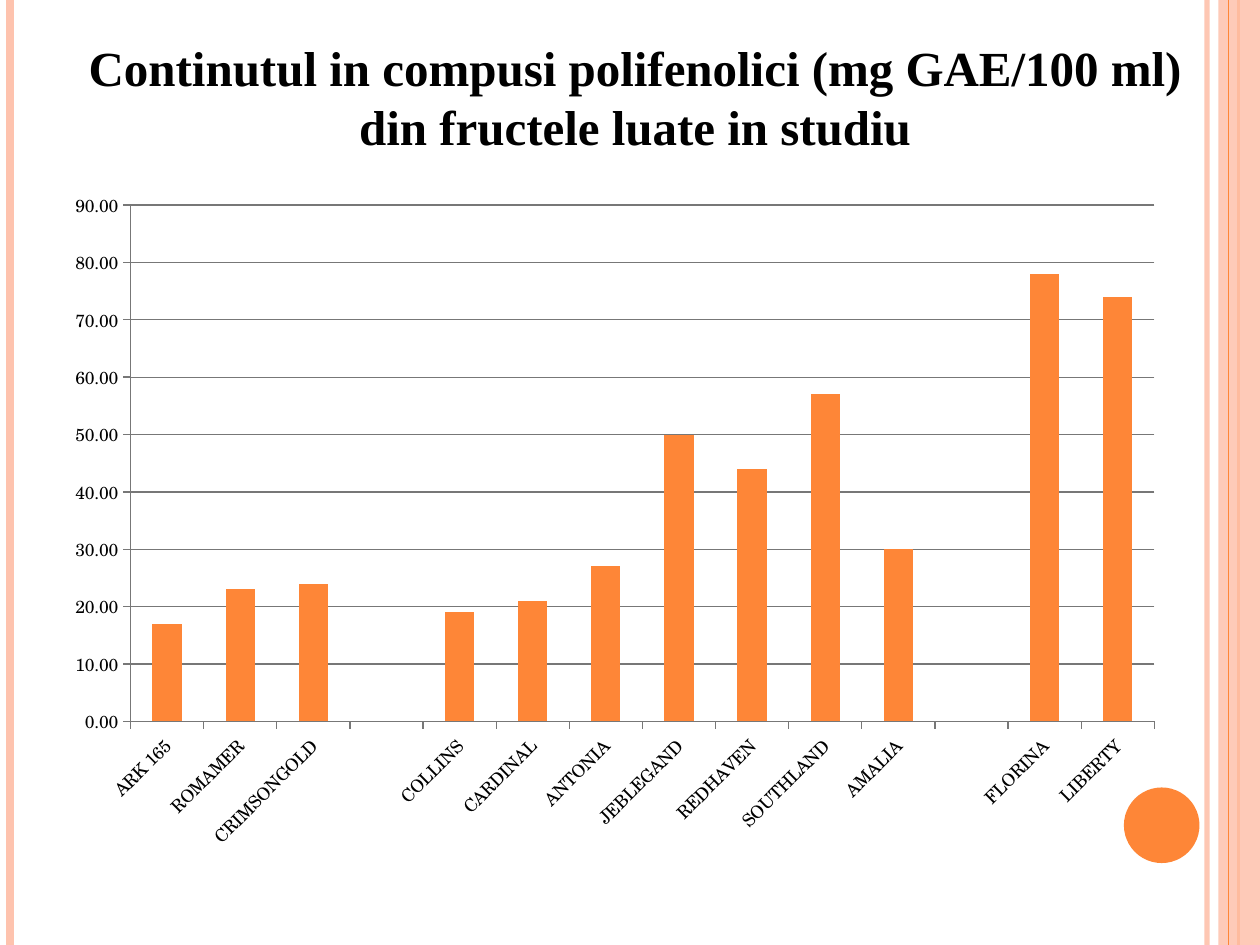
from lxml import etree
from pptx import Presentation
from pptx.chart.data import CategoryChartData
from pptx.dml.color import RGBColor
from pptx.enum import chart as charts, shapes, text
from pptx.oxml.ns import qn
from pptx.util import Inches, Pt

ORANGE, PEACH, GRAY, BLACK = "FE8637", "FEC3AE", "777777", "000000"
POLYPHENOLS = [
    ("ARK 165", 17), ("ROMAMER", 23), ("CRIMSONGOLD", 24), ("", None),
    ("COLLINS", 19), ("CARDINAL", 21), ("ANTONIA", 27),
    ("JEBLEGAND", 50), ("REDHAVEN", 44), ("SOUTHLAND", 57),
    ("AMALIA", 30), ("", None), ("FLORINA", 78), ("LIBERTY", 74),
]


def paint(fill, color, opacity=100):
    fill.solid()
    fill.fore_color.rgb = RGBColor.from_string(color)
    if opacity < 100:
        for node in fill._xPr.iter(qn("a:srgbClr")):
            etree.SubElement(node, qn("a:alpha"), val=str(opacity * 1000))


def add_stripe(page, x, color, width, opacity=100):
    """Draw a vertical line over the full height of the slide."""
    stripe = page.shapes.add_connector(
        shapes.MSO_CONNECTOR.STRAIGHT, Inches(x), 0, Inches(x), Inches(7.5))
    stripe.line.width = Pt(width)
    paint(stripe.line.fill, color, opacity)
    etree.SubElement(stripe._element.spPr, qn("a:effectLst"))


def add_shape(page, kind, left, top, width, height, color, opacity=100):
    shape = page.shapes.add_shape(
        kind, Inches(left), Inches(top), Inches(width), Inches(height))
    shape.shadow.inherit = False
    shape.line.fill.background()
    paint(shape.fill, color, opacity)


def add_text(page, words, left, top, width, height, *, size, font, color, bold=False):
    box = page.shapes.add_textbox(
        Inches(left), Inches(top), Inches(width), Inches(height))
    frame = box.text_frame
    frame.word_wrap = True
    frame.auto_size = text.MSO_AUTO_SIZE.SHAPE_TO_FIT_TEXT
    para = frame.paragraphs[0]
    para.alignment = text.PP_ALIGN.CENTER
    span = para.add_run()
    span.text = words
    span.font.size, span.font.name, span.font.bold = Pt(size), font, bold
    span.font.color.rgb = RGBColor.from_string(color)


def style_axis(axis):
    axis.major_tick_mark = charts.XL_TICK_MARK.OUTSIDE
    axis.minor_tick_mark = charts.XL_TICK_MARK.NONE
    axis.format.line.width = Pt(0.75)
    paint(axis.format.line.fill, GRAY)


def add_column_chart(page, rows, left, top, width, height):
    data = CategoryChartData(number_format="0.00")
    data.categories = [name for name, _ in rows]
    data.add_series("Series 1", [value for _, value in rows])
    chart = page.shapes.add_chart(
        charts.XL_CHART_TYPE.COLUMN_CLUSTERED, Inches(left), Inches(top),
        Inches(width), Inches(height), data).chart
    chart.has_legend = chart.has_title = False
    chart.font.size, chart.font.name = Pt(10), "TeX Gyre Schola"
    chart.font.color.rgb = RGBColor.from_string(BLACK)

    plot = chart.plots[0]
    plot.gap_width = 150
    plot.vary_by_categories = False
    paint(plot.series[0].format.fill, ORANGE)

    names, amounts = chart.category_axis, chart.value_axis
    style_axis(names)
    style_axis(amounts)
    names.tick_labels.font.size = Pt(10)
    for body in names._element.iter(qn("a:bodyPr")):
        body.set("rot", str(-45 * 60000))
    amounts.minimum_scale, amounts.maximum_scale, amounts.major_unit = 0, 90, 10
    amounts.tick_labels.number_format = "0.00"
    amounts.tick_labels.number_format_is_linked = False
    grid = amounts.major_gridlines.format.line
    grid.width = Pt(0.75)
    paint(grid.fill, GRAY)


def main():
    deck = Presentation()
    deck.slide_width, deck.slide_height = Inches(10), Inches(7.5)
    page = deck.slides.add_slide(deck.slide_layouts[6])

    add_stripe(page, 9.58, PEACH, 3, opacity=93)
    add_stripe(page, 0.08, PEACH, 4.5)
    add_stripe(page, 9.83, ORANGE, 1.5)
    add_shape(page, shapes.MSO_SHAPE.RECTANGLE, 9.67, 0, 0.33, 7.5, PEACH, opacity=87)
    add_stripe(page, 9.75, ORANGE, 0.75)
    add_shape(page, shapes.MSO_SHAPE.OVAL, 8.92, 6.25, 0.6, 0.6, ORANGE)

    add_column_chart(page, POLYPHENOLS, 0.42, 1.42, 8.92, 5.42)
    add_text(page, "Continutul in compusi polifenolici (mg GAE/100 ml) "
             "din fructele luate in studiu", 0.58, 0.25, 8.92, 1.04,
             size=28, font="Times New Roman", color=BLACK, bold=True)
    deck.save("out.pptx")


if __name__ == "__main__":
    main()
